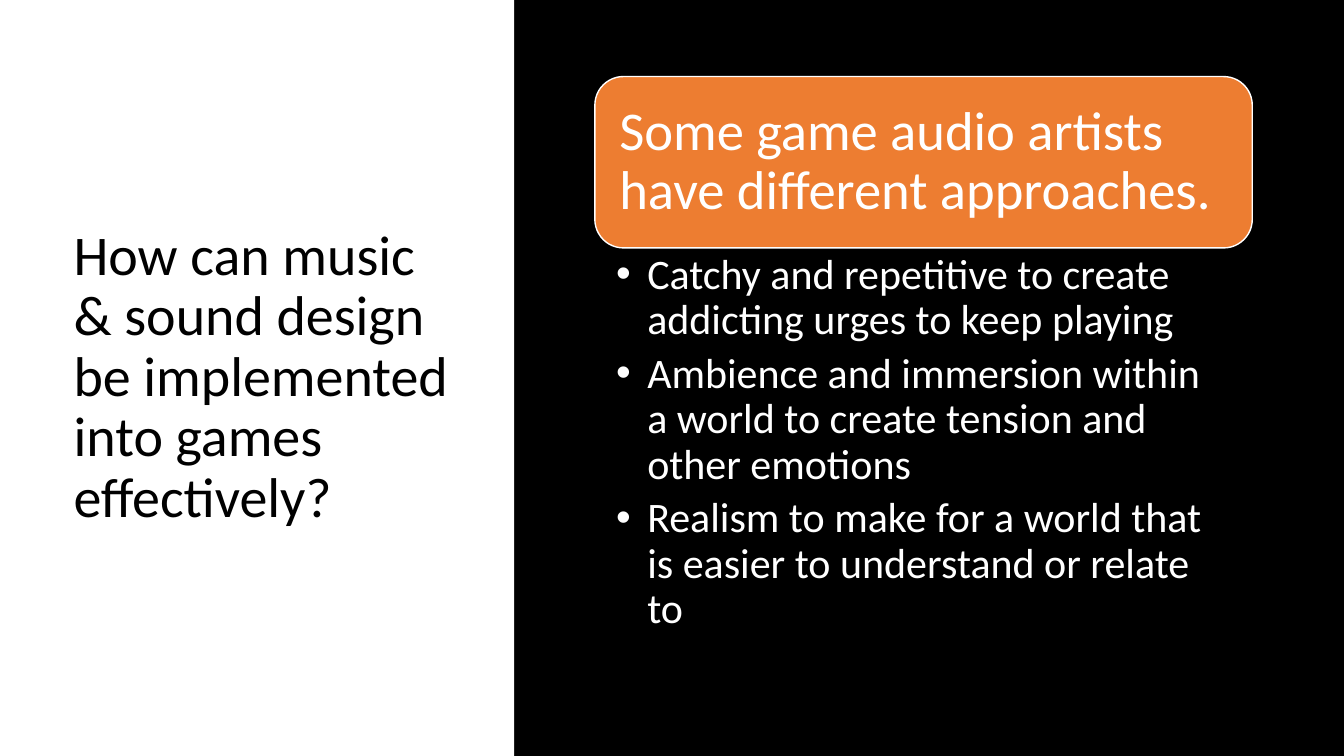
from lxml.etree import SubElement
from pptx import Presentation
from pptx.dml.color import RGBColor
from pptx.enum.shapes import MSO_SHAPE as SHAPE
from pptx.enum.text import MSO_ANCHOR as ANCHOR, MSO_AUTO_SIZE as AUTOSIZE, PP_ALIGN as ALIGN
from pptx.oxml.ns import qn
from pptx.util import Inches, Pt

BLACK = RGBColor(0x00, 0x00, 0x00)
WHITE = RGBColor(0xFF, 0xFF, 0xFF)
ORANGE = RGBColor(0xED, 0x7D, 0x31)

WIDTH, HEIGHT = 13.33, 7.5
PANEL_WIDTH = 5.1
COLUMN_LEFT, COLUMN_WIDTH = 5.9, 6.52
CARD_TOP, CARD_HEIGHT = 0.76, 1.7
LIST_TOP, LIST_HEIGHT = CARD_TOP + CARD_HEIGHT, 4.06
INDENT = 0.31

QUESTION = "How can music & sound design be implemented into games effectively?"
STATEMENT = "Some game audio artists have different approaches."
APPROACHES = [
    "Catchy and repetitive to create addicting urges to keep playing",
    "Ambience and immersion within a world to create tension and other emotions",
    "Realism to make for a world that is easier to understand or relate to",
]


def place(sp, left, top, width, height):
    """Move and size a shape, in inches."""
    sp.left, sp.top = Inches(left), Inches(top)
    sp.width, sp.height = Inches(width), Inches(height)


def add_block(s, kind, box, fill, line=None):
    """Add a flat filled shape, outlined if a line colour is given."""
    sp = s.shapes.add_shape(kind, *[Inches(v) for v in box])
    sp.shadow.inherit = False
    sp.fill.solid()
    sp.fill.fore_color.rgb = fill
    if line is None:
        sp.line.fill.background()
    else:
        sp.line.color.rgb = line
        sp.line.width = Pt(1)
    return sp


def set_bullet(p):
    """Give a paragraph a round bullet with a hanging indent."""
    pPr = p._p.get_or_add_pPr()
    pPr.set("marL", str(Inches(INDENT)))
    pPr.set("indent", str(-Inches(INDENT)))
    SubElement(pPr, qn("a:buFont")).set("typeface", "Arial")
    SubElement(pPr, qn("a:buChar")).set("char", "•")


def write(sp, texts, size, color, anchor, insets, after=0, bullets=False):
    """Fill a shape with left-aligned paragraphs."""
    tf = sp.text_frame
    tf.word_wrap = True
    tf.auto_size = AUTOSIZE.NONE
    tf.vertical_anchor = anchor
    tf.margin_left, tf.margin_top, tf.margin_right, tf.margin_bottom = map(Inches, insets)
    for i, text in enumerate(texts):
        p = tf.add_paragraph() if i else tf.paragraphs[0]
        p.alignment = ALIGN.LEFT
        p.line_spacing = 0.9
        p.space_before, p.space_after = Pt(0), Pt(after)
        if bullets:
            set_bullet(p)
        r = p.add_run()
        r.text = text
        r.font.name, r.font.size = "Calibri", Pt(size)
        r.font.color.rgb = color


def main():
    """Build and save the slide."""
    prs = Presentation()
    prs.slide_width, prs.slide_height = Inches(WIDTH), Inches(HEIGHT)
    s = prs.slides.add_slide(prs.slide_layouts[1])
    s.background.fill.solid()
    s.background.fill.fore_color.rgb = BLACK

    panel = add_block(s, SHAPE.RECTANGLE, (0, 0, PANEL_WIDTH, HEIGHT), WHITE)
    s.shapes._spTree.insert(2, panel._element)

    title, body = s.shapes.title, s.placeholders[1]
    place(title, 0.63, 0.79, 3.96, 5.92)
    write(title, [QUESTION], 40, BLACK, ANCHOR.MIDDLE, (0.1, 0.05, 0.1, 0.05))

    card = add_block(s, SHAPE.ROUNDED_RECTANGLE,
                     (COLUMN_LEFT, CARD_TOP, COLUMN_WIDTH, CARD_HEIGHT), ORANGE, WHITE)
    write(card, [STATEMENT], 39, WHITE, ANCHOR.MIDDLE, (0.16, 0.16, 0.16, 0.16))

    place(body, COLUMN_LEFT, LIST_TOP, COLUMN_WIDTH, LIST_HEIGHT)
    write(body, APPROACHES, 30, WHITE, ANCHOR.TOP, (0.21, 0.05, 0.3, 0.05),
          after=6, bullets=True)

    prs.save("out.pptx")


if __name__ == "__main__":
    main()
